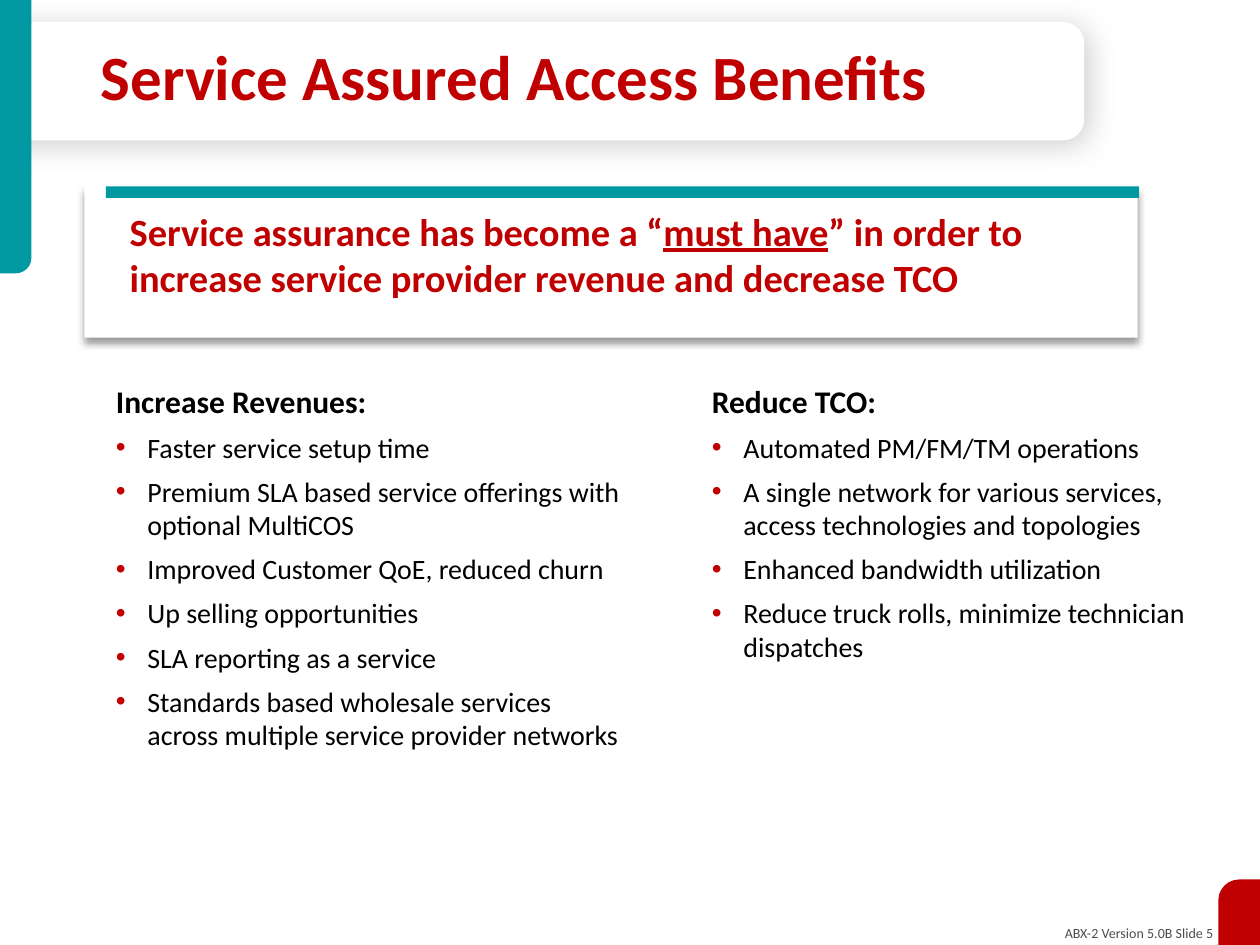
"""Build the Service Assured Access Benefits slide."""
from lxml.etree import SubElement
from pptx import Presentation
from pptx.dml.color import RGBColor
from pptx.enum.shapes import MSO_SHAPE as Shape
from pptx.enum.text import MSO_ANCHOR as Anchor, MSO_AUTO_SIZE as Fit, PP_ALIGN as Align
from pptx.oxml.ns import qn
from pptx.util import Inches, Pt

RED = RGBColor(0xC0, 0x00, 0x00)
TEAL = RGBColor(0x00, 0x98, 0xA1)
WHITE = RGBColor(0xFF, 0xFF, 0xFF)
BLACK = RGBColor(0x00, 0x00, 0x00)
GRAY = RGBColor(0x4D, 0x4D, 0x4D)

GAINS = [
    "Faster service setup time",
    "Premium SLA based service offerings with optional MultiCOS",
    "Improved Customer QoE, reduced churn",
    "Up selling opportunities",
    "SLA reporting as a service",
    "Standards based wholesale services across multiple service provider networks",
]
SAVINGS = [
    "Automated PM/FM/TM operations",
    "A single network for various services, access technologies and topologies",
    "Enhanced bandwidth utilization",
    "Reduce truck rolls, minimize technician dispatches",
]


class Deck:
    """Hold the style and the current slide."""

    face = "Calibri"

    def __init__(self, slide):
        self.slide = slide

    def font(self, para, size, color, bold=False):
        font = para.font
        font.name, font.size, font.bold = self.face, Pt(size), bold
        font.color.rgb = color

    def place(self, shape, box):
        shape.left, shape.top, shape.width, shape.height = map(Inches, box)

    def shape(self, kind, box, fill, adjust=(), turn=0, flip=None):
        shape = self.slide.shapes.add_shape(kind, *map(Inches, box))
        shape.shadow.inherit = False
        shape.fill.solid()
        shape.fill.fore_color.rgb = fill
        shape.line.fill.background()
        shape.rotation = turn
        for i, value in enumerate(adjust):
            shape.adjustments[i] = value
        if flip:
            shape.element.spPr.find(qn("a:xfrm")).set(flip, "1")
        return shape

    def shade(self, shape, alpha, blur, dist, angle):
        effects = shape.element.spPr.find(qn("a:effectLst"))
        shadow = SubElement(effects, qn("a:outerShdw"), blurRad=str(Pt(blur)),
                            dist=str(Pt(dist)), dir=str(angle * 60000),
                            algn="ctr", rotWithShape="0")
        color = SubElement(shadow, qn("a:srgbClr"), val=str(BLACK))
        SubElement(color, qn("a:alpha"), val=str(alpha * 1000))

    def text(self, box, parts, size, color, bold=False, align=Align.LEFT, indent=0):
        frame = self.slide.shapes.add_textbox(*map(Inches, box)).text_frame
        frame.word_wrap = True
        para = frame.paragraphs[0]
        para.alignment = align
        if indent:
            para._p.get_or_add_pPr().set("marL", str(Inches(indent)))
        self.font(para, size, color, bold)
        for words, under in parts:
            run = para.add_run()
            run.text = words
            if under:
                run.font.underline = True

    def holder(self, index, box):
        shape = self.slide.placeholders[index]
        self.place(shape, box)
        shape.element.getparent().append(shape.element)
        frame = shape.text_frame
        frame.word_wrap = True
        frame.auto_size = Fit.NONE
        return frame

    def title(self, words, box):
        frame = self.holder(0, box)
        frame.vertical_anchor = Anchor.MIDDLE
        para = frame.paragraphs[0]
        para.text = words
        para.alignment = Align.LEFT
        para.line_spacing = 0.85
        self.font(para, 36, RED, True)

    def bullet(self, para, mark):
        props = para._p.get_or_add_pPr()
        props.set("marL", str(Inches(0.25)))
        props.set("indent", str(Inches(-0.25)))
        if mark:
            SubElement(SubElement(props, qn("a:buClr")), qn("a:srgbClr"), val=str(RED))
            SubElement(props, qn("a:buChar"), char="•")
        else:
            SubElement(props, qn("a:buNone"))

    def list(self, index, left, head, items):
        frame = self.holder(index, (left, 2.98, 4.27, 3.1))
        for i, words in enumerate([head, *items]):
            para = frame.add_paragraph() if i else frame.paragraphs[0]
            para.text = words
            para.space_before = Pt(6 if i else 0)
            self.bullet(para, i > 0)
            self.font(para, 16 if i else 18, BLACK, i == 0)


def main():
    show = Presentation()
    show.slide_width, show.slide_height = Inches(10), Inches(7.5)
    deck = Deck(show.slides.add_slide(show.slide_layouts[3]))

    deck.text((6.71, 7.29, 3.02, 0.24), [("ABX-2 Version 5.0B Slide 5", False)],
              8, GRAY, align=Align.RIGHT)
    card = deck.shape(Shape.ROUND_2_SAME_RECTANGLE, (3.83, -3.66, 0.94, 8.61), WHITE,
                      (0.18, 0), turn=90)
    deck.shade(card, 19, 17, 3, 45)
    deck.shape(Shape.ROUND_1_RECTANGLE, (0, 0, 0.25, 2.17), TEAL, (0.5,), flip="flipV")
    deck.shape(Shape.ROUND_1_RECTANGLE, (9.67, 6.98, 0.33, 0.52), RED, (0.5,), flip="flipH")
    deck.title("Service Assured Access Benefits", (0.7, 0.29, 7.4, 0.71))

    deck.list(1, 0.82, "Increase Revenues:", GAINS)
    panel = deck.shape(Shape.RECTANGLE, (0.67, 1.47, 8.36, 1.21), WHITE)
    deck.shade(panel, 40, 4, 3, 90)
    quote = [
        ("Service assurance has become a “", False),
        ("must have", True),
        ("” in order to increase service provider revenue and decrease TCO", False),
    ]
    deck.text((0.69, 1.6, 8.29, 0.79), quote, 22, RED, True, indent=0.24)
    deck.shape(Shape.RECTANGLE, (0.84, 1.48, 8.2, 0.09), TEAL)
    deck.list(2, 5.55, "Reduce TCO:", SAVINGS)

    show.save("out.pptx")


if __name__ == "__main__":
    main()
